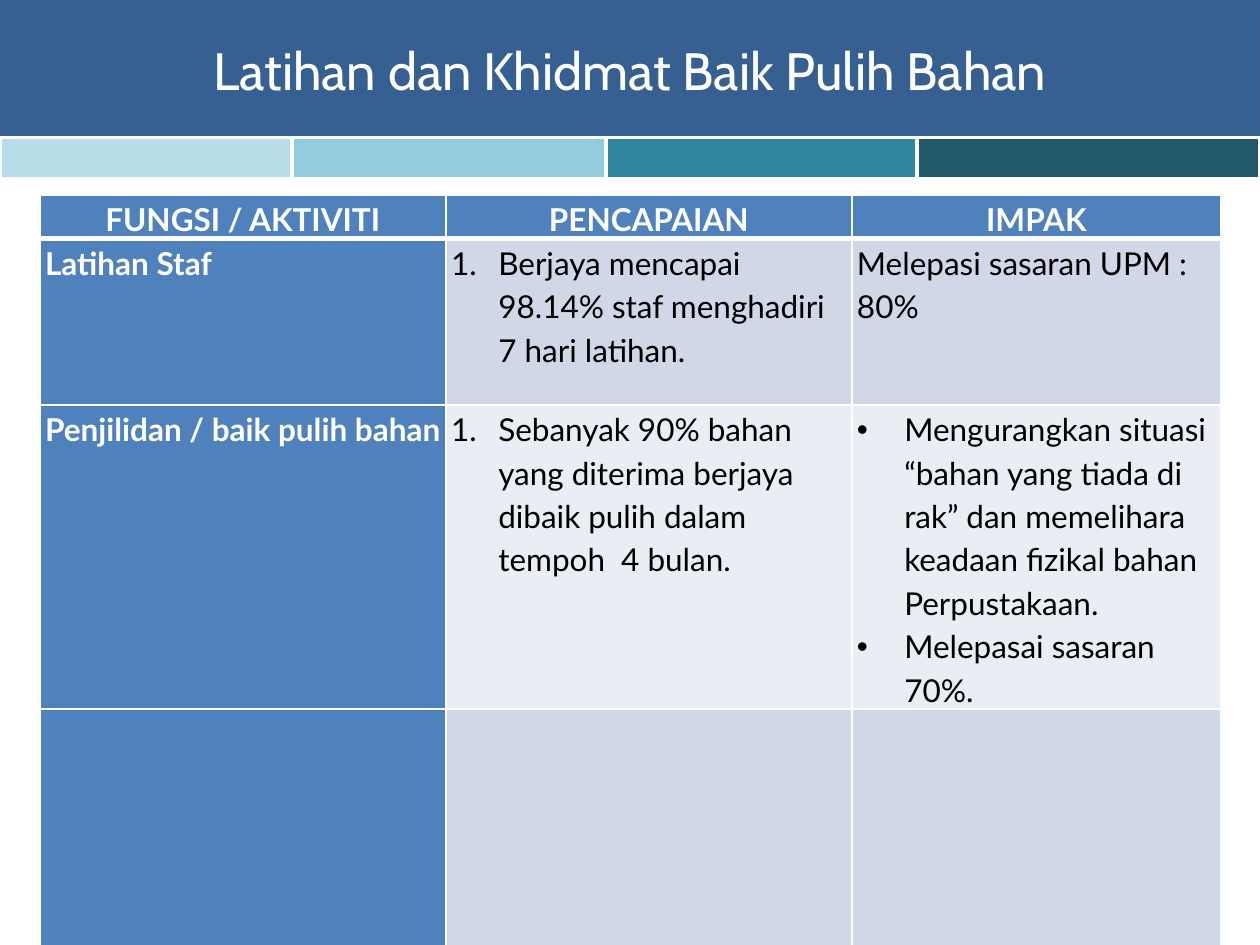
from lxml import etree
from pptx import Presentation
from pptx.dml.color import RGBColor
from pptx.enum import shapes, text
from pptx.oxml import ns
from pptx.util import Pt

WHITE = RGBColor(0xFF, 0xFF, 0xFF)
BLACK = RGBColor(0, 0, 0)
NAVY = RGBColor(0x37, 0x60, 0x92)
EDGE = RGBColor(0x3A, 0x5F, 0x8C)
BLUE = RGBColor(0x4F, 0x81, 0xBD)
DARK = RGBColor(0xD0, 0xD8, 0xE8)
PALE = RGBColor(0xE9, 0xED, 0xF4)
TEALS = [RGBColor(0xB7, 0xDE, 0xE8), RGBColor(0x93, 0xCD, 0xDD),
         RGBColor(0x31, 0x85, 0x9C), RGBColor(0x21, 0x59, 0x68)]


def node(parent, tag, **attrs):
    return etree.SubElement(parent, ns.qn(tag), **attrs)


class Deck:
    head, body = "Cabin", "Lato"
    size = 18
    indent = 27

    def __init__(self, slide):
        self.slide = slide

    def run(self, par, words, font, size, color, bold=False):
        run = par.add_run()
        run.text = words
        run.font.name, run.font.size = font, Pt(size)
        run.font.color.rgb, run.font.bold = color, bold

    def rect(self, group, left, top, width, height, fill, line):
        box = group.shapes.add_shape(shapes.MSO_SHAPE.RECTANGLE,
                                     Pt(left), Pt(top), Pt(width), Pt(height))
        box.shadow.inherit = False
        box.fill.solid()
        box.fill.fore_color.rgb = fill
        box.line.color.rgb = line
        box.line.width = Pt(2)

    def title(self, words, left, top, width, height):
        title = self.slide.shapes.title
        title.left, title.top = Pt(left), Pt(top)
        title.width, title.height = Pt(width), Pt(height)
        frame = title.text_frame
        frame.auto_size = text.MSO_AUTO_SIZE.NONE
        frame.vertical_anchor = text.MSO_ANCHOR.MIDDLE
        par = frame.paragraphs[0]
        par.alignment = text.PP_ALIGN.CENTER
        self.run(par, words, self.head, 30, WHITE)
        # Bring the title in front of the banner
        title.element.getparent().append(title.element)

    def mark(self, par, kind):
        props = par._p.get_or_add_pPr()
        props.set("marL", str(Pt(self.indent)))
        props.set("indent", str(-Pt(self.indent)))
        if kind == "1":
            node(props, "a:buFont", typeface="+mj-lt")
            node(props, "a:buAutoNum", type="arabicPeriod")
        else:
            node(props, "a:buFont", typeface="Arial")
            node(props, "a:buChar", char=kind)

    def border(self, cell, top, bottom):
        props = cell._tc.get_or_add_tcPr()
        for side, width in zip("LRTB", (1, 1, top, bottom)):
            line = node(props, f"a:ln{side}", w=str(Pt(width)))
            fill = node(line, "a:solidFill")
            node(fill, "a:srgbClr", val=str(WHITE))

    def cell(self, cell, pars, fill, color, bold, align, kind):
        cell.margin_left = cell.margin_right = Pt(3)
        cell.margin_top = cell.margin_bottom = 0
        cell.fill.solid()
        cell.fill.fore_color.rgb = fill
        frame = cell.text_frame
        for i, words in enumerate(pars):
            par = frame.add_paragraph() if i else frame.paragraphs[0]
            par.alignment = align
            par.line_spacing = 1.15
            if kind:
                self.mark(par, kind)
            self.run(par, words, self.body, self.size, color, bold)

    def table(self, left, top, cols, rows, data):
        grid = self.slide.shapes.add_table(
            len(rows), len(cols), Pt(left), Pt(top),
            Pt(sum(cols)), Pt(sum(rows))).table
        for col, width in zip(grid.columns, cols):
            col.width = Pt(width)
        for row, height in zip(grid.rows, rows):
            row.height = Pt(height)
        for r, line in enumerate(data):
            for c, (kind, pars) in enumerate(line):
                cell = grid.cell(r, c)
                key = r == 0 or c == 0
                fill = BLUE if key else (DARK if r % 2 else PALE)
                align = text.PP_ALIGN.LEFT if r else text.PP_ALIGN.CENTER
                self.border(cell, 3 if r == 1 else 1, 1 if r else 3)
                self.cell(cell, pars, fill, WHITE if key else BLACK,
                          key, align, kind)


def main():
    prs = Presentation()
    prs.slide_width, prs.slide_height = Pt(720), Pt(540)
    deck = Deck(prs.slides.add_slide(prs.slide_layouts[5]))

    # Banner with a strip of teal bands
    banner = deck.slide.shapes.add_group_shape()
    deck.rect(banner, 0, 0, 720, 78.5, NAVY, EDGE)
    edges = [0, 167, 346.5, 524, 720]
    for left, right, fill in zip(edges, edges[1:], TEALS):
        deck.rect(banner, left, 78.5, right - left, 23.75, fill, WHITE)

    deck.title("Latihan dan Khidmat Baik Pulih Bahan", 14, 17.5, 692, 44)

    # Table: each cell is a list mark and its paragraphs
    data = [
        [("", ["FUNGSI / AKTIVITI"]), ("", ["PENCAPAIAN"]), ("", ["IMPAK"])],
        [("", ["Latihan Staf"]),
         ("1", ["Berjaya mencapai  98.14% staf menghadiri 7 hari latihan."]),
         ("", ["Melepasi sasaran UPM : 80%"])],
        [("", ["Penjilidan / baik pulih bahan"]),
         ("1", ["Sebanyak 90% bahan yang diterima berjaya dibaik pulih "
                "dalam tempoh  4 bulan."]),
         ("•", ["Mengurangkan situasi “bahan yang tiada di rak” dan "
                "memelihara keadaan fizikal bahan Perpustakaan.",
                "Melepasai sasaran 70%."])],
        [("", [])] * 3,
    ]
    deck.table(22.75, 111.5, [232, 232, 211], [19, 95, 93, 148], data)

    prs.save("out.pptx")


if __name__ == "__main__":
    main()
